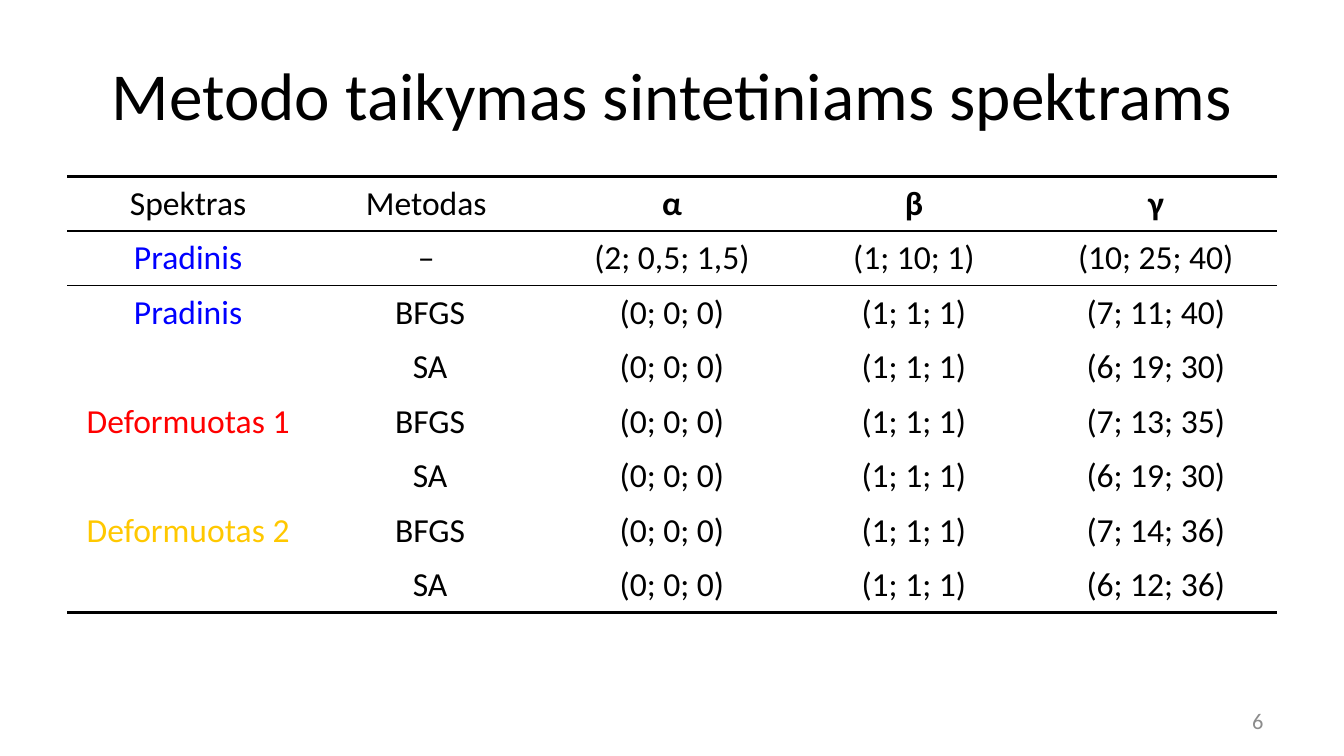
"""Build the slide that lists fitted parameters of synthetic spectra."""
from dataclasses import dataclass

from lxml import etree
from pptx import Presentation
from pptx.dml.color import RGBColor
from pptx.enum.text import MSO_ANCHOR, PP_ALIGN
from pptx.oxml.ns import qn
from pptx.util import Pt

CENTER = PP_ALIGN.CENTER
RIGHT = PP_ALIGN.RIGHT
MIDDLE = MSO_ANCHOR.MIDDLE
TITLE_ONLY = 5
FONT = "Calibri"
COLORS = {
    "black": "000000",
    "grey": "8C8C8C",
    "blue": "0000FF",
    "red": "FF0000",
    "yellow": "FFC800",
}
LEFT, WIDTH = 36, 648
ROW_HEIGHT = 29.2
THICK, THIN = 1.5, 1
HEADINGS = ("Spektras", "Metodas ", "α", "β", "γ")


@dataclass(frozen=True)
class Fit:
    """One table row below the headings."""

    spectrum: str
    method: str
    gamma: str
    color: str = "black"
    alpha: str = "(0; 0; 0)"
    beta: str = "(1; 1; 1)"

    def texts(self) -> tuple[str, ...]:
        """Return the cell texts from left to right."""
        return self.spectrum, self.method, self.alpha, self.beta, self.gamma


FITS = (
    Fit("Pradinis", "– ", "(10; 25; 40)", "blue", "(2; 0,5; 1,5)", "(1; 10; 1)"),
    Fit("Pradinis", "BFGS", "(7; 11; 40)", "blue"),
    Fit("", "SA", "(6; 19; 30)"),
    Fit("Deformuotas 1", "BFGS", "(7; 13; 35)", "red"),
    Fit("", "SA", "(6; 19; 30)"),
    Fit("Deformuotas 2", "BFGS", "(7; 14; 36)", "yellow"),
    Fit("", "SA", "(6; 12; 36)"),
)
RULES = {0: THICK, 1: THIN, 2: THIN, len(FITS) + 1: THICK}


def write(frame, text: str, size: float, color: str = "black",
          align=CENTER, bold: bool = False) -> None:
    """Add one formatted run to the first paragraph of a text frame."""
    para = frame.paragraphs[0]
    para.alignment = align
    span = para.add_run()
    span.text = text
    span.font.name = FONT
    span.font.size = Pt(size)
    span.font.bold = bold
    span.font.color.rgb = RGBColor.from_string(COLORS[color])


def set_borders(cell, top: float, bottom: float) -> None:
    """Draw the horizontal cell borders and hide every border of zero width."""
    properties = cell._tc.get_or_add_tcPr()
    widths = {"a:lnL": 0, "a:lnR": 0, "a:lnT": top, "a:lnB": bottom}
    for index, (tag, width) in enumerate(widths.items()):
        line = etree.Element(qn(tag), w=str(Pt(width)))
        if width:
            fill = etree.SubElement(line, qn("a:solidFill"))
            etree.SubElement(fill, qn("a:srgbClr"), val=COLORS["black"])
        else:
            etree.SubElement(line, qn("a:noFill"))
        properties.insert(index, line)


def add_title(page, text: str) -> None:
    """Place and fill the title placeholder."""
    box = page.shapes.title
    box.left, box.top = Pt(LEFT), Pt(16.2)
    box.width, box.height = Pt(WIDTH), Pt(67.5)
    box.text_frame.vertical_anchor = MIDDLE
    write(box.text_frame, text, 36)


def add_fit_table(page) -> None:
    """Add the table of starting and fitted parameters."""
    rows = [HEADINGS, *(fit.texts() for fit in FITS)]
    table = page.shapes.add_table(
        len(rows), len(HEADINGS), Pt(LEFT), Pt(94.5),
        Pt(WIDTH), Pt(ROW_HEIGHT * len(rows))).table
    table.first_row = False
    table.horz_banding = False
    for row, texts in enumerate(rows):
        table.rows[row].height = Pt(ROW_HEIGHT)
        for column, text in enumerate(texts):
            cell = table.cell(row, column)
            cell.fill.background()
            set_borders(cell, RULES.get(row, 0), RULES.get(row + 1, 0))
            if text:
                color = FITS[row - 1].color if row and not column else "black"
                write(cell.text_frame, text, 18, color,
                      bold=row == 0 and column >= 2)


def add_page_number(page, number: int) -> None:
    """Add the page number at the lower right."""
    box = page.shapes.add_textbox(Pt(516), Pt(375.3), Pt(168), Pt(21.6))
    frame = box.text_frame
    frame.word_wrap = True
    frame.vertical_anchor = MIDDLE
    write(frame, str(number), 12, "grey", RIGHT)


def main() -> None:
    """Create and save the deck."""
    deck = Presentation()
    deck.slide_width, deck.slide_height = Pt(720), Pt(405)
    page = deck.slides.add_slide(deck.slide_layouts[TITLE_ONLY])
    add_title(page, "Metodo taikymas sintetiniams spektrams")
    add_page_number(page, 6)
    add_fit_table(page)
    deck.save("out.pptx")


if __name__ == "__main__":
    main()
